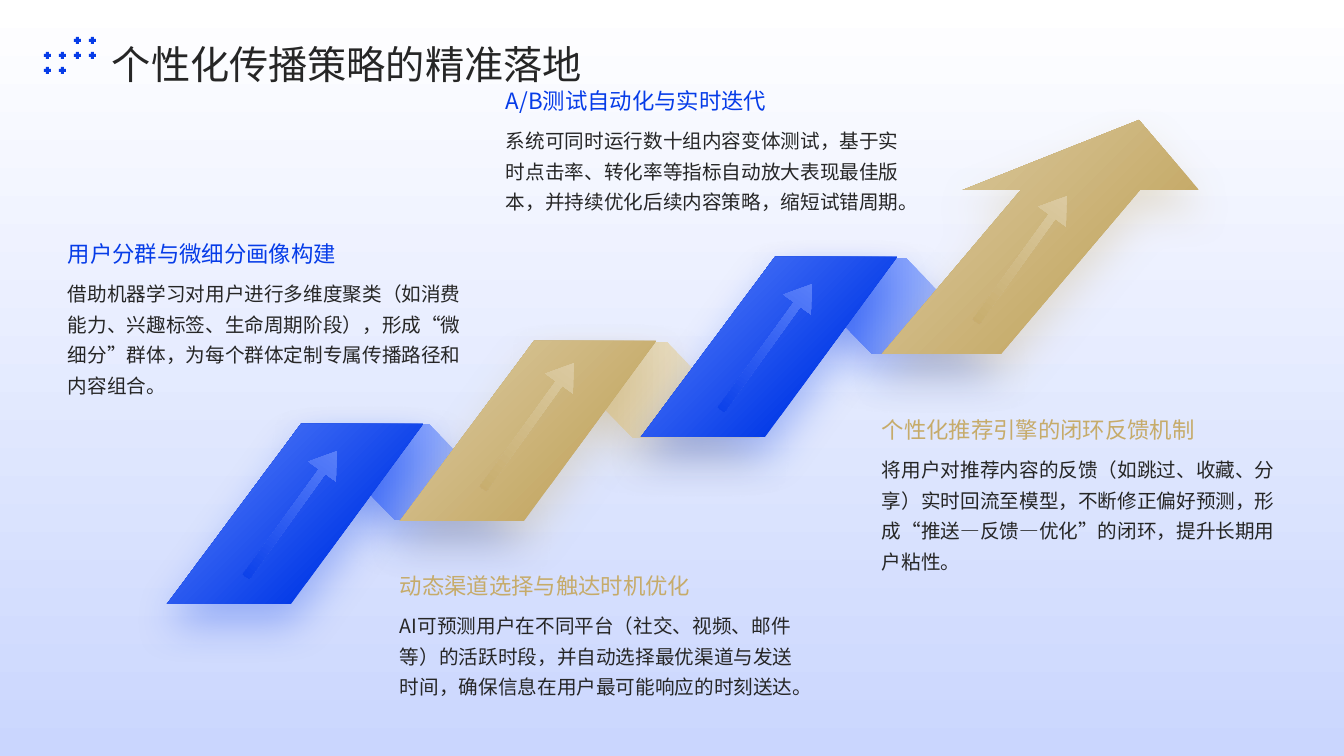
from lxml.etree import SubElement
from pptx import Presentation
from pptx.dml.color import RGBColor
from pptx.enum.shapes import MSO_SHAPE as Preset
from pptx.enum.text import MSO_ANCHOR as Anchor
from pptx.oxml.ns import qn
from pptx.util import Pt

# Content
FONT = "Noto Sans CJK SC"
WHITE = RGBColor(0xFF, 0xFF, 0xFF)
SKY = RGBColor(0xCA, 0xD6, 0xFE)
INK = RGBColor(0x26, 0x26, 0x26)
BLUE = RGBColor(0x06, 0x3C, 0xE8)
BLUE_MID = RGBColor(0x60, 0x85, 0xFB)
BLUE_PALE = RGBColor(0x95, 0xAE, 0xFC)
GOLD = RGBColor(0xC6, 0xAB, 0x6A)
GOLD_MID = RGBColor(0xDD, 0xCD, 0xA6)
GOLD_PALE = RGBColor(0xE8, 0xDD, 0xC3)
TONES = {BLUE: (BLUE_MID, BLUE_PALE), GOLD: (GOLD_MID, GOLD_PALE)}

TITLE = "个性化传播策略的精准落地"
# Colour, left, body top, heading, body
NOTES = [
    (GOLD, 400, 607, "动态渠道选择与触达时机优化",
     "AI可预测用户在不同平台（社交、视频、邮件等）的活跃时段，并自动选择最优渠道与发送时间，"
     "确保信息在用户最可能响应的时刻送达。"),
    (BLUE, 68, 275, "用户分群与微细分画像构建",
     "借助机器学习对用户进行多维度聚类（如消费能力、兴趣标签、生命周期阶段），"
     "形成“微细分”群体，为每个群体定制专属传播路径和内容组合。"),
    (BLUE, 506, 122, "A/B测试自动化与实时迭代",
     "系统可同时运行数十组内容变体测试，基于实时点击率、转化率等指标自动放大表现最佳版本，"
     "并持续优化后续内容策略，缩短试错周期。"),
    (GOLD, 882, 451, "个性化推荐引擎的闭环反馈机制",
     "将用户对推荐内容的反馈（如跳过、收藏、分享）实时回流至模型，不断修正偏好预测，"
     "形成“推送—反馈—优化”的闭环，提升长期用户粘性。"),
]

# Ribbon outlines, measured from the lower left corner
BAND = [(134, -180), (0, 0), (124, 0), (256, -180)]
TIP = [(317, -164), (257, -234), (81, -164), (139, -164), (0, 0), (119, 0), (258, -164)]
# Colour, lower left corner, outline, inner arrow corner
STEPS = [
    (BLUE, (167, 604), BAND, (214, 497)),
    (GOLD, (400, 521), BAND, (451, 409)),
    (BLUE, (641, 437), BAND, (689, 330)),
    (GOLD, (882, 354), TIP, (944, 242)),
]
FOLDS = [(BLUE, 302, 424), (GOLD, 540, 342), (BLUE, 779, 258)]

PLUS = [(2, 0), (5, 0), (5, 2), (7, 2), (7, 5), (5, 5),
        (5, 7), (2, 7), (2, 5), (0, 5), (0, 2), (2, 2)]
PLUS_ROWS = ["..++", "++++", "++.."]
PLUS_LEFT, PLUS_TOP, PLUS_STEP = 44, 37, 15

PX = 914400 / 100.8


def px(value):
    return round(value * PX)


def paint(shape, stops, angle):
    """Gradient fill; angle runs clockwise in degrees."""
    shape.shadow.inherit = False
    shape.line.fill.background()
    shape.fill.gradient()
    shape.fill.gradient_angle = (360 - angle) % 360
    for stop, (position, color) in zip(shape.fill.gradient_stops, stops):
        stop.position = position
        stop.color.rgb = color


def add_glow(shape, color):
    effects = shape.element.spPr.find(qn("a:effectLst"))
    shadow = SubElement(effects, qn("a:outerShdw"), blurRad=str(Pt(30)),
                        dist=str(Pt(15)), dir="5400000", algn="t", rotWithShape="0")
    tint = SubElement(shadow, qn("a:srgbClr"), val=str(color))
    SubElement(tint, qn("a:alpha"), val="30000")


def add_preset(shapes, preset, left, top, width, height):
    return shapes.add_shape(preset, px(left), px(top), px(width), px(height))


def add_outline(shapes, outline, origins):
    """One freeform repeating the outline at every origin."""
    contours = [[(x + left, y + top) for x, y in outline] for left, top in origins]
    builder = shapes.build_freeform(*contours[0][0], scale=PX)
    for number, contour in enumerate(contours):
        if number:
            builder.move_to(*contour[0])
        builder.add_line_segments(contour[1:], close=True)
    return builder.convert_to_shape()


def add_text(shapes, text, left, top, width, height, *, size, color=INK,
             spacing=1.3, anchor=Anchor.TOP):
    box = shapes.add_textbox(px(left), px(top), px(width), px(height))
    frame = box.text_frame
    frame.word_wrap = True
    frame.vertical_anchor = anchor
    frame.margin_left = frame.margin_right = frame.margin_top = frame.margin_bottom = 0
    para = frame.paragraphs[0]
    para.line_spacing = spacing
    span = para.add_run()
    span.text = text
    span.font.size = Pt(size)
    span.font.color.rgb = color
    span.font.name = FONT
    SubElement(span.font._element, qn("a:ea"), typeface=FONT)


def main():
    deck = Presentation()
    deck.slide_width, deck.slide_height = px(1344), px(756)
    page = deck.slides.add_slide(deck.slide_layouts[6])
    shapes = page.shapes

    # Backdrop
    backdrop = add_preset(shapes, Preset.RECTANGLE, 0, 0, 1344, 756)
    paint(backdrop, [(0, WHITE), (1, SKY)], 90)

    # Ribbon: folds behind, bands in front
    ribbon = shapes.add_group_shape().shapes
    for color, left, top in FOLDS:
        mid, pale = TONES[color]
        fold = add_preset(ribbon, Preset.PARALLELOGRAM, left, top, 220, 96)
        fold.adjustments[0] = 0.97
        fold.element.spPr.xfrm.set("flipH", "1")
        paint(fold, [(0.3, pale), (0.67, mid)], 0)
        add_glow(fold, color)
    for color, corner, outline, _ in STEPS:
        band = add_outline(ribbon, outline, [corner])
        paint(band, [(0.3, color), (1, TONES[color][0])], 225)
        add_glow(band, color)

    # Headings and bodies
    for color, left, top, heading, body in NOTES:
        add_text(shapes, body, left, top, 394, 127, size=14)
        add_text(shapes, heading, left, top - 86, 394, 78, size=16, color=color,
                 spacing=1.2, anchor=Anchor.BOTTOM)

    # Arrows on the bands
    for color, _, _, (left, top) in STEPS:
        arrow = add_preset(shapes, Preset.RIGHT_ARROW, left, top, 155, 34)
        arrow.adjustments[0], arrow.adjustments[1] = 0.24, 0.74
        arrow.rotation = 305.8
        arrow.element.spPr.xfrm.set("flipV", "1")
        paint(arrow, [(0, TONES[color][0]), (1, color)], 180)

    # Title and plus signs
    add_text(shapes, TITLE, 112, 26, 1144, 59, size=28)
    origins = [(PLUS_LEFT + PLUS_STEP * column, PLUS_TOP + PLUS_STEP * row)
               for row, marks in enumerate(PLUS_ROWS)
               for column, mark in enumerate(marks) if mark == "+"]
    pluses = add_outline(shapes, PLUS, origins)
    pluses.shadow.inherit = False
    pluses.line.fill.background()
    pluses.fill.solid()
    pluses.fill.fore_color.rgb = BLUE

    deck.save("out.pptx")


if __name__ == "__main__":
    main()
